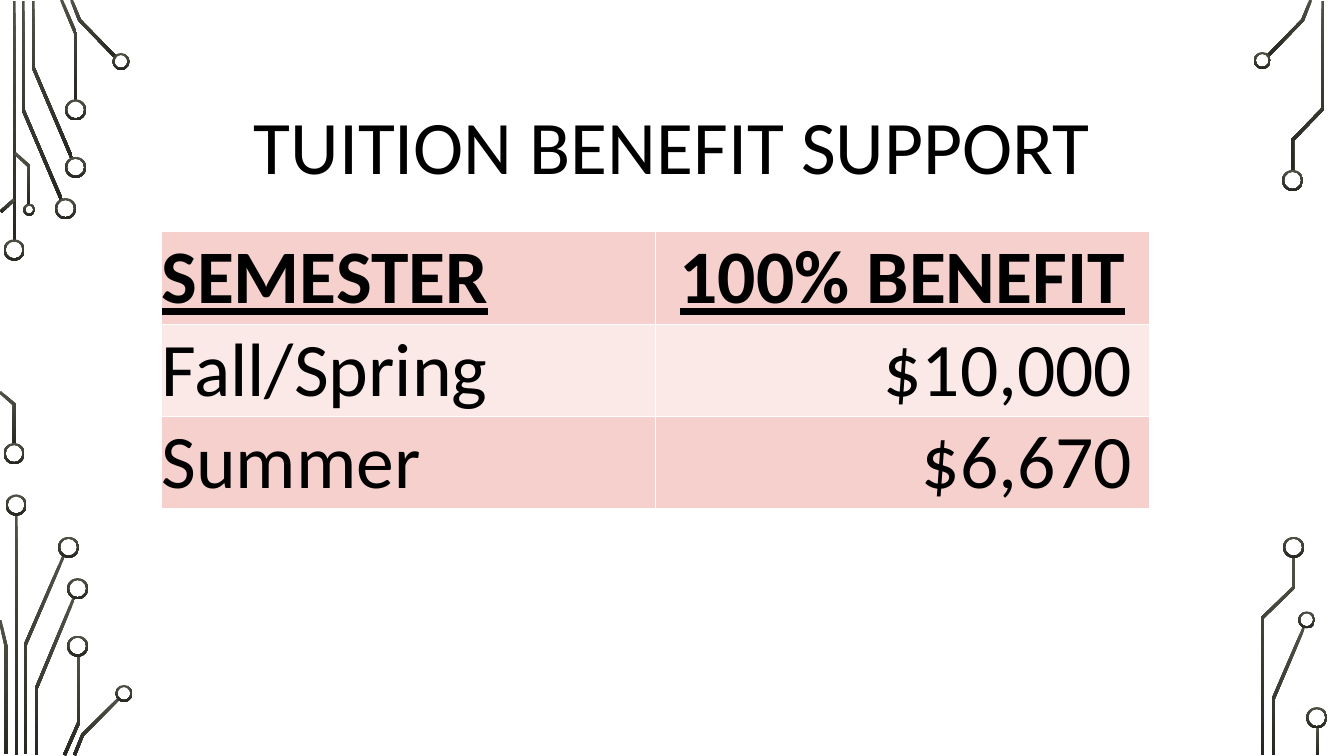
from math import hypot

from pptx import Presentation
from pptx import util as u
from pptx.dml.color import RGBColor
from pptx.enum import shapes, text
from pptx.oxml.ns import qn
from lxml import etree

TITLE = "TUITION BENEFIT SUPPORT"
BENEFITS = [
    ("SEMESTER", "100% BENEFIT"),
    ("Fall/Spring", "$10,000"),
    ("Summer", "$6,670"),
]

FONT, SIZE = "Calibri", u.Pt(54)
BLACK = RGBColor(0x00, 0x00, 0x00)
WHITE = RGBColor(0xFF, 0xFF, 0xFF)
PINK = RGBColor(0xF6, 0xD0, 0xCD)
PALE_PINK = RGBColor(0xFB, 0xE9, 0xE8)
TRACE_TOP = RGBColor(0x50, 0x50, 0x46)
TRACE_BOTTOM = RGBColor(0x28, 0x28, 0x23)

WIDTH, HEIGHT = 13.33, 7.5
TABLE_LEFT, TABLE_TOP = 1.6, 2.3
COLUMN, ROW = 4.9, 0.91
TRACE_WIDTH = 0.03
RIM = 0.02

# Middle lines of the circuit traces, in inches
TRACES = [
    # top left
    [(0.14, 0.01), (0.14, 2.4)],
    [(0.23, 0.01), (0.23, 1.09), (0.61, 1.98)],
    [(0.33, 0.01), (0.33, 0.67), (0.71, 1.56)],
    [(0.61, 0), (0.75, 0.33), (0.75, 1)],
    [(0.71, 0), (0.79, 0.2), (1.15, 0.57)],
    [(0.01, 2.1), (0.14, 1.98)],
    [(0.15, 1.52), (0.29, 1.65), (0.29, 2.03)],
    # bottom left
    [(0, 3.89), (0.14, 4.01), (0.14, 4.41)],
    [(0.16, 5.1), (0.16, 7.49)],
    [(0.25, 7.48), (0.25, 6.4), (0.63, 5.52)],
    [(0, 6.15), (0.06, 6.41), (0.06, 7.48)],
    [(0.36, 7.49), (0.36, 6.83), (0.73, 5.94)],
    [(0.64, 7.49), (0.78, 7.17), (0.78, 6.5)],
    [(0.74, 7.49), (0.82, 7.29), (1.18, 6.93)],
    # top right
    [(12.57, 0.56), (12.92, 0.2), (13, 0)],
    [(12.82, 1.69), (12.82, 1.39), (13.12, 1.08), (13.12, 0.01)],
    # bottom right
    [(12.63, 7.49), (12.63, 6.93), (12.93, 6.23)],
    [(12.52, 7.49), (12.52, 6.13), (12.83, 5.83), (12.83, 5.52)],
    [(13.07, 7.21), (13.07, 7.49)],
]
# Ring diameter: centres
RINGS = {
    0.21: [(0.14, 2.48), (0.14, 4.5), (0.65, 2.07), (0.75, 1.66), (0.75, 1.09),
           (0.16, 5.01), (0.68, 5.43), (0.77, 5.84), (0.77, 6.41),
           (12.82, 1.79), (12.83, 5.43), (13.06, 7.12)],
    0.17: [(1.2, 0.61), (1.23, 6.88), (12.52, 0.6), (12.96, 6.15)],
    0.12: [(0.29, 2.08)],
}


def paint_circuit(part):
    part.shadow.inherit = False
    part.line.fill.background()
    part.fill.gradient()
    part.fill.gradient_angle = 270
    for stop, colour in zip(part.fill.gradient_stops, (TRACE_TOP, TRACE_BOTTOM)):
        stop.color.rgb = colour


def trace_outline(middle):
    """Widen a middle line into a closed outline with mitred corners."""
    normals = []
    for (x1, y1), (x2, y2) in zip(middle, middle[1:]):
        length = hypot(x2 - x1, y2 - y1)
        normals.append(((y1 - y2) / length, (x2 - x1) / length))
    left, right = [], []
    for (x, y), (ax, ay), (bx, by) in zip(
            middle, normals[:1] + normals, normals + normals[-1:]):
        reach = TRACE_WIDTH / 2 / (1 + ax * bx + ay * by)
        dx, dy = (ax + bx) * reach, (ay + by) * reach
        left.append((u.Inches(x + dx), u.Inches(y + dy)))
        right.append((u.Inches(x - dx), u.Inches(y - dy)))
    return left + right[::-1]


def draw_circuit(slide):
    for middle in TRACES:
        outline = trace_outline(middle)
        builder = slide.shapes.build_freeform(*outline[0])
        builder.add_line_segments(outline[1:], close=True)
        paint_circuit(builder.convert_to_shape())
    for diameter, centres in RINGS.items():
        for x, y in centres:
            ring = slide.shapes.add_shape(
                shapes.MSO_SHAPE.DONUT, u.Inches(x - diameter / 2),
                u.Inches(y - diameter / 2), u.Inches(diameter), u.Inches(diameter))
            ring.adjustments[0] = RIM / diameter
            paint_circuit(ring)


def write(paragraph, words, align, **emphasis):
    paragraph.alignment = align
    run = paragraph.add_run()
    run.text = words
    for name, value in {"name": FONT, "size": SIZE, **emphasis}.items():
        setattr(run.font, name, value)
    run.font.color.rgb = BLACK


def add_borders(cell):
    properties = cell._tc.get_or_add_tcPr()
    for place, side in enumerate(("a:lnL", "a:lnR", "a:lnT", "a:lnB")):
        border = etree.Element(qn(side), w=str(u.Pt(1)))
        fill = etree.SubElement(border, qn("a:solidFill"))
        etree.SubElement(fill, qn("a:srgbClr"), val=str(WHITE))
        properties.insert(place, border)


def add_title(slide):
    title = slide.shapes.title
    title.left, title.top = u.Inches(1.25), u.Inches(0.68)
    title.width, title.height = u.Inches(10.83), u.Inches(1.62)
    title.text_frame.vertical_anchor = text.MSO_ANCHOR.MIDDLE
    heading = title.text_frame.paragraphs[0]
    heading.line_spacing = 0.9
    write(heading, TITLE, text.PP_ALIGN.CENTER)


def add_benefits(slide):
    rows, columns = len(BENEFITS), len(BENEFITS[0])
    table = slide.shapes.add_table(
        rows, columns, u.Inches(TABLE_LEFT), u.Inches(TABLE_TOP),
        u.Inches(COLUMN * columns), u.Inches(ROW * rows)).table
    table.first_row = table.horz_banding = False
    for r, entries in enumerate(BENEFITS):
        header = r == 0
        for c, words in enumerate(entries):
            cell = table.cell(r, c)
            amount = c == 1 and not header
            cell.margin_left = cell.margin_top = cell.margin_bottom = 0
            cell.margin_right = u.Inches(0.17 if amount else 0)
            cell.vertical_anchor = text.MSO_ANCHOR.MIDDLE
            cell.fill.solid()
            cell.fill.fore_color.rgb = PALE_PINK if r % 2 else PINK
            add_borders(cell)
            align = (text.PP_ALIGN.RIGHT if amount else
                     text.PP_ALIGN.CENTER if c else text.PP_ALIGN.LEFT)
            write(cell.text_frame.paragraphs[0], words, align,
                  bold=header, underline=header)


def main():
    deck = Presentation()
    deck.slide_width, deck.slide_height = u.Inches(WIDTH), u.Inches(HEIGHT)
    slide = deck.slides.add_slide(deck.slide_layouts.get_by_name("Title Only"))
    draw_circuit(slide)
    add_title(slide)
    add_benefits(slide)
    deck.save("out.pptx")


if __name__ == "__main__":
    main()
